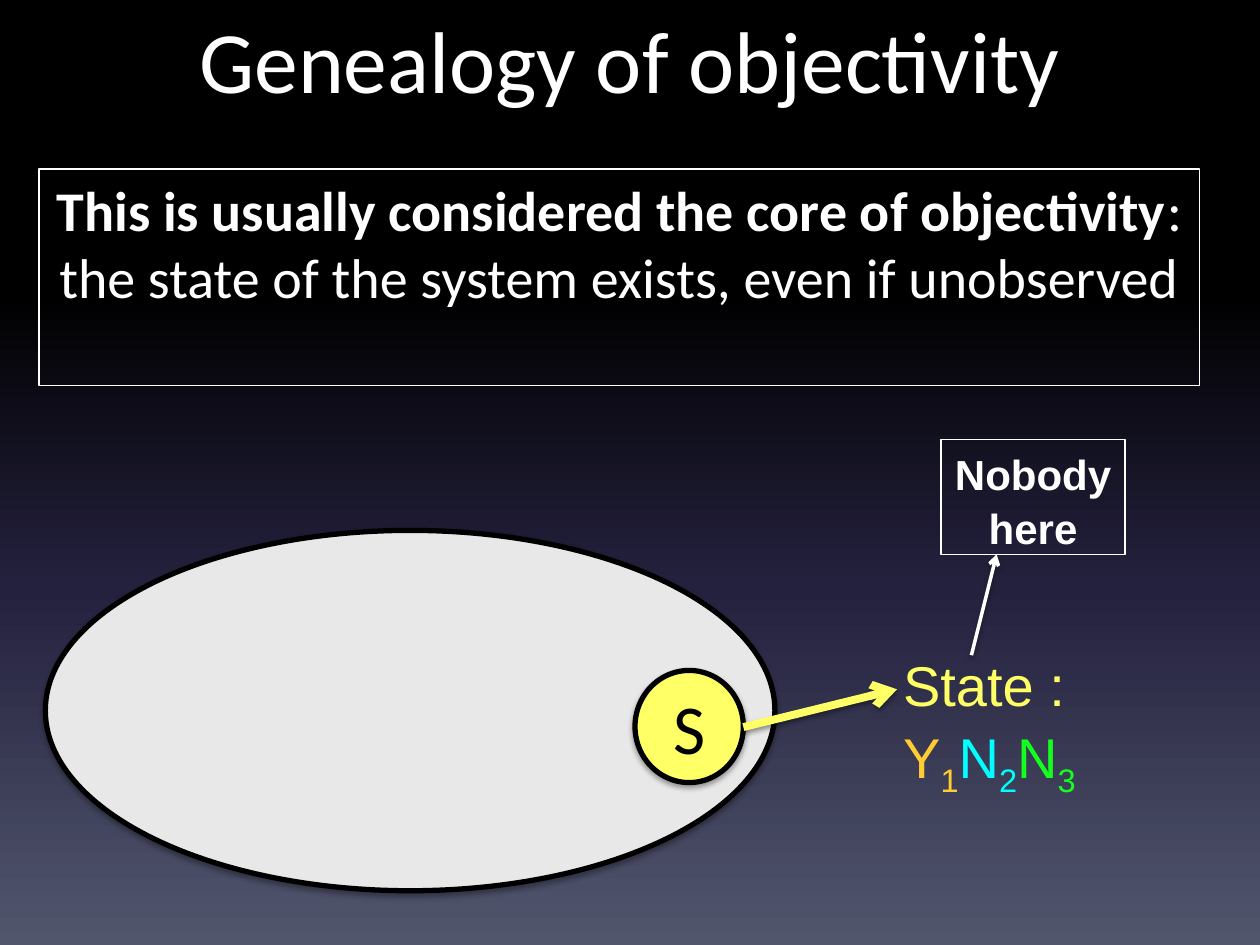
from lxml import etree
from pptx import Presentation, oxml
from pptx.dml import color
from pptx.enum import shapes, text
from pptx.oxml import ns
from pptx.util import Pt

HEX = dict(white="FFFFFF", black="000000", grey="E8E8E8", yellow="FFFF66",
           gold="FFCD32", cyan="00FFFF", green="15FF1F")
SKY = [(0, "000000"), (31, "000000"), (62, "24213E"), (100, "51566D")]
FORM = shapes.MSO_SHAPE


def rgb(name):
    return color.RGBColor.from_string(HEX[name])


def paint_sky(slide):
    fill = slide.background.fill
    fill.gradient()
    fill.gradient_angle = 270
    stops = slide.background._cSld.find(".//" + ns.qn("a:gsLst"))
    for stop in list(stops):
        stops.remove(stop)
    for spot, tint in SKY:
        stops.append(oxml.parse_xml(
            f'<a:gs {ns.nsdecls("a")} pos="{spot * 1000}">'
            f'<a:srgbClr val="{tint}"/></a:gs>'))


def shade(part, alpha, dist):
    """Give a part a soft shadow straight below it."""
    part._element.spPr.append(oxml.parse_xml(
        f'<a:effectLst {ns.nsdecls("a")}>'
        f'<a:outerShdw blurRad="{Pt(3.1)}" dist="{Pt(dist)}" dir="5400000" rotWithShape="0">'
        f'<a:srgbClr val="000000"><a:alpha val="{alpha * 1000}"/></a:srgbClr>'
        '</a:outerShdw></a:effectLst>'))


def write(part, lines, font, size, center=True, wrap=True, middle=False, space=None):
    """Each line is a list of runs: (words, colour, bold, subscript)."""
    frame = part.text_frame
    frame.word_wrap = wrap
    frame.vertical_anchor = text.MSO_ANCHOR.MIDDLE if middle else text.MSO_ANCHOR.TOP
    for i, line in enumerate(lines):
        para = frame.add_paragraph() if i else frame.paragraphs[0]
        para.alignment = text.PP_ALIGN.CENTER if center else text.PP_ALIGN.LEFT
        if space:
            para.line_spacing = space
        for words, tint, bold, sub in line:
            run = para.add_run()
            run.text = words
            run.font.name, run.font.size, run.font.bold = font, Pt(size), bold
            run.font.color.rgb = rgb(tint)
            if sub:
                run.font._element.set("baseline", "-25000")


def add_text(slide, box):
    return slide.shapes.add_textbox(*map(Pt, box))


def add_form(slide, kind, box, fill, line, width):
    part = slide.shapes.add_shape(kind, *map(Pt, box))
    if fill:
        part.fill.solid()
        part.fill.fore_color.rgb = rgb(fill)
    else:
        part.fill.background()
    part.line.color.rgb = rgb(line)
    part.line.width = Pt(width)
    if kind == FORM.OVAL:
        shade(part, 35, 1.8)
    else:
        part.shadow.inherit = False
    return part


def add_arrow(slide, start, end, tint, width):
    arrow = slide.shapes.add_connector(
        shapes.MSO_CONNECTOR.STRAIGHT, *map(Pt, start + end))
    arrow.line.color.rgb = rgb(tint)
    arrow.line.width = Pt(width)
    etree.SubElement(arrow.line._get_or_add_ln(), ns.qn("a:tailEnd"), type="arrow")
    shade(arrow, 38, 1.6)


def draw_title(slide, box):
    write(add_text(slide, box), [[("Genealogy of objectivity", "white", False, False)]],
          "Calibri", 50)


def draw_claim(slide, box):
    frame = add_form(slide, FORM.RECTANGLE, box, None, "white", 0.75)
    write(frame, [[
        ("This is usually considered the core of objectivity", "white", True, False),
        (": the state of the system exists, even if unobserved", "white", False, False),
    ]], "Calibri", 32)


def draw_scene(slide, box):
    left, top, wide, high = box

    def at(x, y):
        return left + x, top + y

    # World and the state beside it
    add_form(slide, FORM.OVAL, at(0, 51.8) + (416.9, 205.9), "grey", "black", 3)
    marks = [("Y", "1", "gold"), ("N", "2", "cyan"), ("N", "3", "green")]
    state = [(word, tint, False, sub) for sign, low, tint in marks
             for word, sub in ((sign, False), (low, True))]
    write(add_text(slide, at(483.1, 114.5) + (118.8, 85)),
          [[("State :", "yellow", False, False)], state],
          "Arial", 32, center=False, wrap=False, space=1.06)

    # System and its arrow to the state
    system = add_form(slide, FORM.OVAL, at(337, 131.8) + (61.9, 64.1), "yellow", "black", 3)
    write(system, [[("S", "black", False, False)]], "Calibri", 40, middle=True)
    add_arrow(slide, at(398.9, 164.2), at(486.7, 142.6), "yellow", 4.5)

    # Missing observer
    absent = add_form(slide, FORM.RECTANGLE, at(wide - 105.1, 0) + (105.1, 65.5),
                      None, "white", 0.75)
    write(absent, [[(word, "white", True, False)] for word in ("Nobody", "here")],
          "Arial", 24, wrap=False, space=1.06)
    add_arrow(slide, at(529.2, 123.1), at(543.6, 65.5), "white", 2)


def main():
    deck = Presentation()
    deck.slide_width, deck.slide_height = Pt(720), Pt(540)
    slide = deck.slides.add_slide(deck.slide_layouts[6])
    paint_sky(slide)
    draw_title(slide, (36, 0, 648, 90))
    draw_claim(slide, (22.3, 96.5, 663.1, 123.8))
    draw_scene(slide, (25.9, 251.3, 617, 257.7))
    deck.save("out.pptx")


if __name__ == "__main__":
    main()
